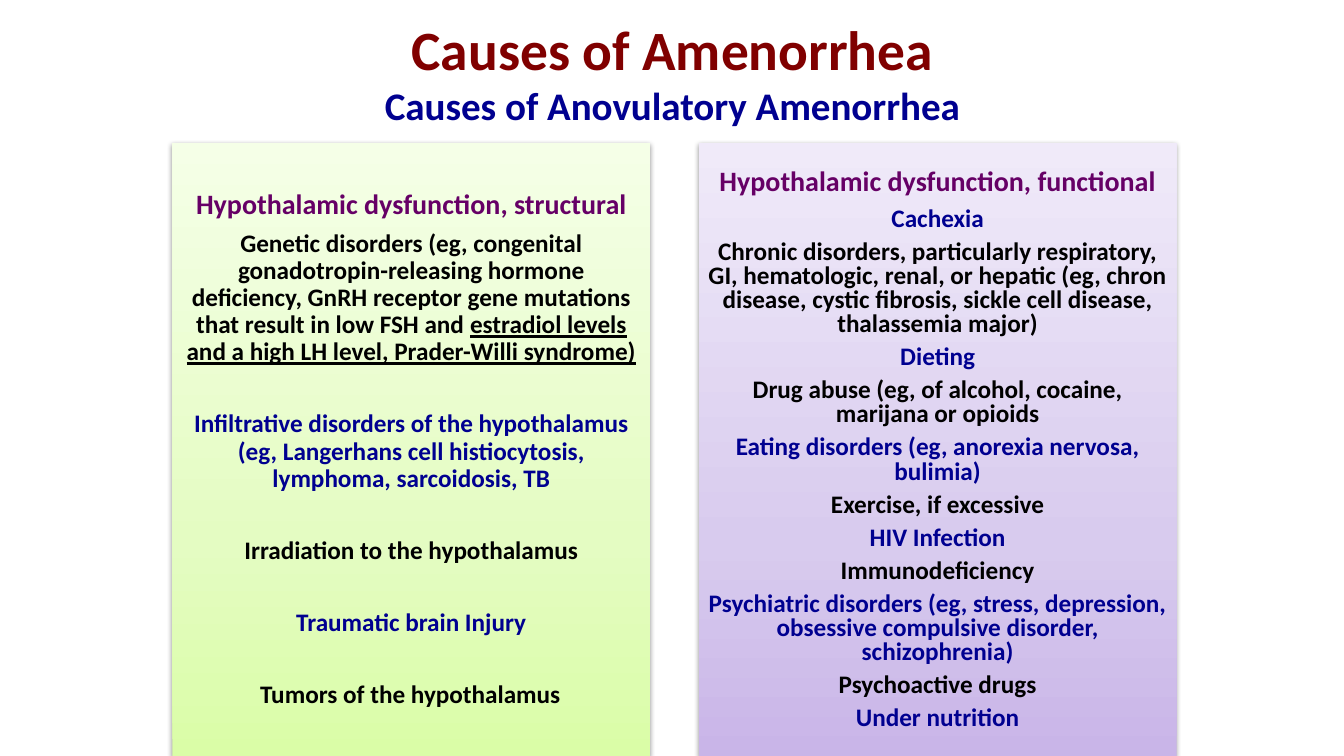
"""Builds the slide on the causes of anovulatory amenorrhea."""
from lxml import etree
from pptx import Presentation
from pptx.dml.color import RGBColor
from pptx.enum.shapes import MSO_SHAPE
from pptx.enum.text import MSO_ANCHOR, MSO_AUTO_SIZE, PP_ALIGN
from pptx.oxml import parse_xml
from pptx.oxml.ns import nsdecls, qn
from pptx.util import Inches, Pt

RECTANGLE = MSO_SHAPE.RECTANGLE
MIDDLE = MSO_ANCHOR.MIDDLE
CENTER = PP_ALIGN.CENTER
NO_AUTOFIT = MSO_AUTO_SIZE.NONE
TITLE_ONLY = 5

MAROON, NAVY, PURPLE, BLACK = "800000", "000090", "660066", "000000"
STOPS = (0, 35, 100)


def rgb(value):
    """Turn a hex string into a colour."""
    return RGBColor.from_string(value)


def apply(target, values):
    """Set each attribute named in a dict."""
    for name, value in values.items():
        setattr(target, name, value)


class CausesSlide:
    """Holds the text style and the current slide."""

    font_name = "Calibri"
    inset = Inches(0.08)

    def __init__(self, deck):
        """Add a title-only slide to the deck."""
        self.slide = deck.slides.add_slide(deck.slide_layouts[TITLE_ONLY])

    def frame(self, shape, margins):
        """Prepare the text frame of a shape."""
        text_frame = shape.text_frame
        apply(text_frame, {"word_wrap": True, "auto_size": NO_AUTOFIT,
                           "vertical_anchor": MIDDLE, **margins})
        return text_frame

    def paragraph(self, text_frame, index, parts, size, color, spacing=1.0, after=0):
        """Write one centred paragraph of (text, underline) parts."""
        paragraph = text_frame.add_paragraph() if index else text_frame.paragraphs[0]
        apply(paragraph, {"alignment": CENTER, "line_spacing": spacing,
                          "space_before": Pt(0), "space_after": Pt(after)})
        for text, underline in parts:
            run = paragraph.add_run()
            run.text = text
            apply(run.font, {"name": self.font_name, "size": Pt(size),
                             "bold": True, "underline": underline})
            run.font.color.rgb = rgb(color)

    def title(self, lines):
        """Place the title and its second line."""
        title = self.slide.shapes.title
        apply(title, {"left": Inches(0.67), "top": Inches(0.3),
                      "width": Inches(12), "height": Inches(1.25)})
        text_frame = self.frame(title, {"margin_top": 0, "margin_bottom": Inches(0.42)})
        for index, (text, size, color) in enumerate(lines):
            self.paragraph(text_frame, index, [(text, False)], size, color)

    def gradient(self, panel, colors):
        """Fill a panel with a gradient that rises from its lower edge."""
        panel.fill.gradient()
        panel.fill.gradient_angle = 90
        stop_list = panel.element.spPr.find(".//" + qn("a:gsLst"))
        for stop in list(stop_list):
            stop_list.remove(stop)
        for position, color in zip(STOPS, colors):
            stop = etree.SubElement(stop_list, qn("a:gs"), pos=str(position * 1000))
            etree.SubElement(stop, qn("a:srgbClr"), val=color)

    def shadow(self, panel):
        """Give a panel a soft shadow below it."""
        panel.shadow.inherit = False
        panel.element.spPr.find(qn("a:effectLst")).append(parse_xml(
            f'<a:outerShdw {nsdecls("a")} blurRad="40000" dist="20000" '
            'dir="5400000" rotWithShape="0"><a:srgbClr val="000000">'
            '<a:alpha val="38000"/></a:srgbClr></a:outerShdw>'))

    def panel(self, left, colors, heading, causes, spacing, gap):
        """Draw a panel with a heading and causes of alternating colour."""
        panel = self.slide.shapes.add_shape(
            RECTANGLE, Inches(left), Inches(1.42), Inches(4.74), Inches(6.08))
        self.gradient(panel, colors)
        panel.line.fill.background()
        self.shadow(panel)
        sides = ("left", "top", "right", "bottom")
        text_frame = self.frame(panel, {f"margin_{side}": self.inset for side in sides})
        self.paragraph(text_frame, 0, [(heading, False)], 20, PURPLE, 0.9, 7)
        for index, (color, *parts) in enumerate(causes, 1):
            after = gap if index < len(causes) else 6.3
            self.paragraph(text_frame, index, parts, 18, color, spacing, after)


def alternate(causes, first, second):
    """Pair plain causes with two colours in turn."""
    return [((first, second)[index % 2], (cause, False))
            for index, cause in enumerate(causes)]


GENETIC = (BLACK,
           ("Genetic disorders (eg, congenital gonadotropin-releasing hormone "
            "deficiency, GnRH receptor gene mutations that result in low FSH and ", False),
           ("estradiol levels and a high LH level, Prader-Willi syndrome)", True))

STRUCTURAL = [GENETIC] + alternate([
    "Infiltrative disorders of the hypothalamus (eg, Langerhans cell "
    "histiocytosis, lymphoma, sarcoidosis, TB",
    "Irradiation to the hypothalamus",
    "Traumatic brain Injury",
    "Tumors of the hypothalamus\t",
], NAVY, BLACK)

FUNCTIONAL = alternate([
    "Cachexia",
    "Chronic disorders, particularly respiratory, GI, hematologic, renal, or "
    "hepatic (eg, chron disease, cystic fibrosis, sickle cell disease, "
    "thalassemia major)",
    "Dieting",
    "Drug abuse (eg, of alcohol, cocaine, marijana or opioids",
    "Eating disorders (eg, anorexia nervosa, bulimia)",
    "Exercise, if excessive",
    "HIV Infection",
    "Immunodeficiency",
    "Psychiatric disorders (eg, stress, depression, obsessive compulsive "
    "disorder, schizophrenia)",
    "Psychoactive drugs",
    "Under nutrition",
], NAVY, BLACK)


def main():
    """Build and save the deck."""
    deck = Presentation()
    apply(deck, {"slide_width": Inches(13.33), "slide_height": Inches(7.5)})
    slide = CausesSlide(deck)
    slide.title([("Causes of Amenorrhea", 39.6, MAROON),
                 ("Causes of Anovulatory Amenorrhea", 27.9, NAVY)])
    slide.panel(1.71, ("DAFDA7", "E4FCC2", "F5FFE7"),
                "Hypothalamic dysfunction, structural", STRUCTURAL, 0.9, 32)
    slide.panel(6.93, ("C9B5E8", "D8CBEE", "F0EAF9"),
                "Hypothalamic dysfunction, functional", FUNCTIONAL, 0.8, 6.3)
    deck.save("out.pptx")


if __name__ == "__main__":
    main()
